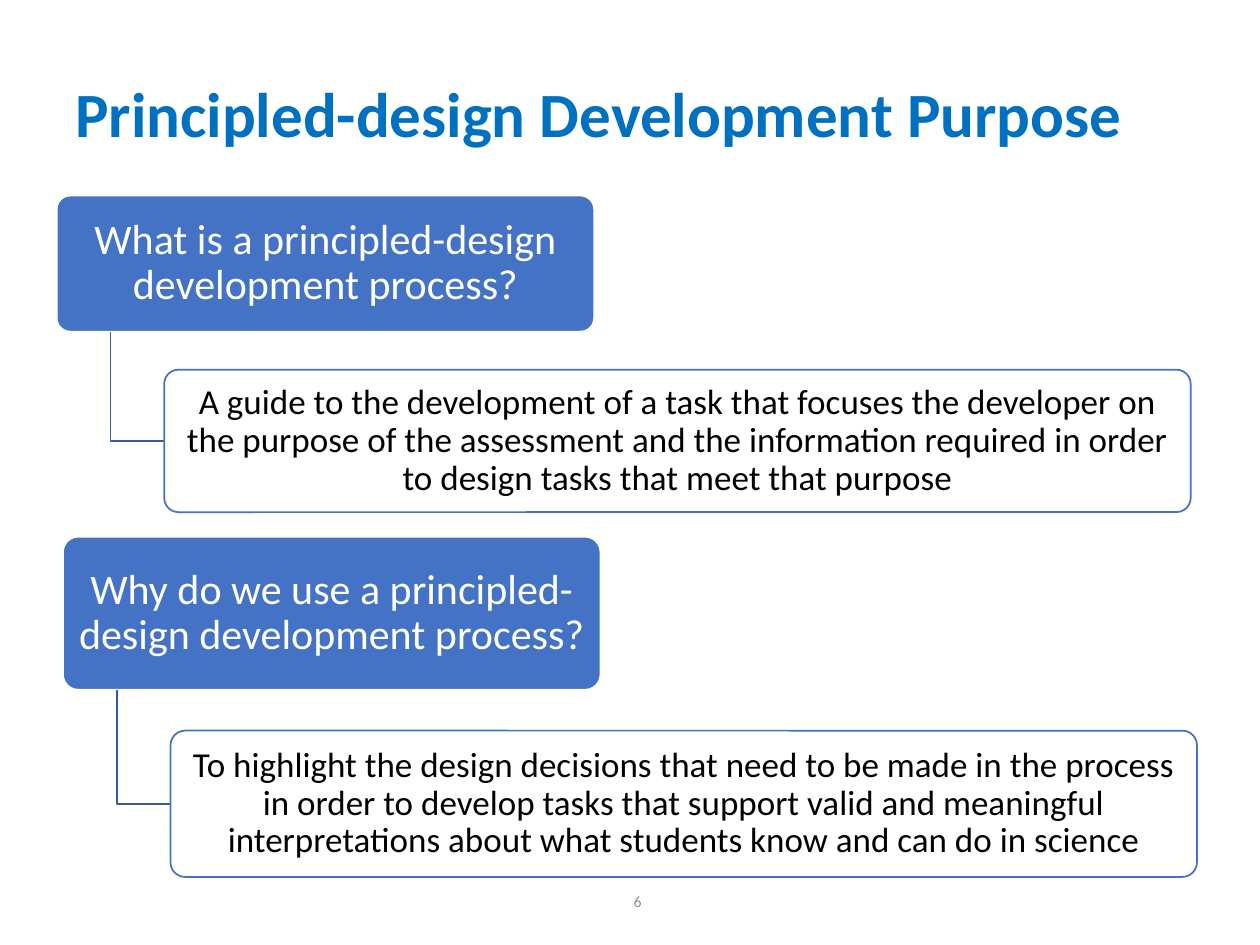
import pptx
import pptx.dml.color
import pptx.enum.shapes
import pptx.enum.text
import pptx.oxml.ns
import pptx.util
from collections import namedtuple
from lxml import etree

SLIDE_WIDTH = pptx.util.Inches(10)
SLIDE_HEIGHT = pptx.util.Inches(7.5)
COLORS = {
    "title": "0070C0",
    "question": "4472C4",
    "elbow": "365B9D",
    "number": "8C8C8C",
    "white": "FFFFFF",
    "black": "000000",
}
ALIGN = pptx.enum.text.PP_ALIGN
Box = namedtuple("Box", "left top width height")


def slide_box(left, top, width, height):
    """Turn shares of the slide's size into a box of lengths."""
    return Box(int(left * SLIDE_WIDTH), int(top * SLIDE_HEIGHT),
               int(width * SLIDE_WIDTH), int(height * SLIDE_HEIGHT))


def color(name):
    return pptx.dml.color.RGBColor.from_string(COLORS[name])


def write_text(shape, text, size, color_name, bold=False, align=ALIGN.LEFT,
               line_spacing=0.9, insets=(0.1, 0.05)):
    frame = shape.text_frame
    frame.word_wrap = True
    frame.vertical_anchor = pptx.enum.text.MSO_ANCHOR.MIDDLE
    frame.margin_left = frame.margin_right = pptx.util.Inches(insets[0])
    frame.margin_top = frame.margin_bottom = pptx.util.Inches(insets[1])
    paragraph = frame.paragraphs[0]
    paragraph.text = text
    paragraph.alignment = align
    paragraph.line_spacing = line_spacing
    paragraph.font.name = "Calibri"
    paragraph.font.size = pptx.util.Pt(size)
    paragraph.font.bold = bold
    paragraph.font.color.rgb = color(color_name)


def add_label(slide, box, text, **text_format):
    write_text(slide.shapes.add_textbox(*box), text, **text_format)


def set_line(shape, color_name):
    shape.shadow.inherit = False
    shape.line.color.rgb = color(color_name)
    shape.line.width = pptx.util.Pt(1)


def add_card(shapes, box, text, fill, line, opacity=100, **text_format):
    card = shapes.add_shape(
        pptx.enum.shapes.MSO_SHAPE.ROUNDED_RECTANGLE, *box)
    card.adjustments[0] = 0.1
    card.fill.solid()
    card.fill.fore_color.rgb = color(fill)
    if opacity < 100:
        rgb = card.fill._xPr.find(".//" + pptx.oxml.ns.qn("a:srgbClr"))
        alpha = etree.SubElement(rgb, pptx.oxml.ns.qn("a:alpha"))
        alpha.set("val", str(opacity * 1000))
    set_line(card, line)
    write_text(card, text, align=ALIGN.CENTER, insets=(0.08, 0.06),
               **text_format)


def add_elbow(shapes, left, top, right, bottom):
    builder = shapes.build_freeform(left, top)
    builder.add_line_segments([(left, bottom), (right, bottom)], close=False)
    elbow = builder.convert_to_shape()
    elbow.fill.background()
    set_line(elbow, "elbow")


def add_question_and_answer(slide, box, question, answer, question_share,
                            answer_share):
    """Place a question at the top left and its answer at the bottom right."""
    shapes = slide.shapes.add_group_shape().shapes
    question_box = Box(box.left, box.top, int(box.width * 0.474),
                       int(box.height * question_share))
    indent = question_box.width // 5
    answer_height = int(box.height * answer_share)
    answer_box = Box(box.left + indent, box.top + box.height - answer_height,
                     box.width - indent, answer_height)
    add_card(shapes, question_box, question, "question", "white",
             size=24, color_name="white")
    add_elbow(shapes, box.left + indent // 2, box.top + question_box.height,
              answer_box.left, answer_box.top + answer_height // 2)
    add_card(shapes, answer_box, answer, "white", "question", opacity=90,
             size=20, color_name="black")


def main():
    presentation = pptx.Presentation()
    presentation.slide_width = SLIDE_WIDTH
    presentation.slide_height = SLIDE_HEIGHT
    slide = presentation.slides.add_slide(presentation.slide_layouts[6])

    add_label(slide, slide_box(0.294, 0.927, 0.225, 0.053), "6",
              size=9, color_name="number", align=ALIGN.RIGHT, line_spacing=1.0)
    add_label(slide, slide_box(0.05, 0.04, 0.9, 0.167),
              "Principled-design Development Purpose",
              size=36, color_name="title", bold=True)
    add_question_and_answer(
        slide, slide_box(0.045, 0.207, 0.9, 0.335),
        "What is a principled-design development process?",
        "A guide to the development of a task that focuses the developer on "
        "the purpose of the assessment and the information required in order "
        "to design tasks that meet that purpose",
        question_share=0.43, answer_share=0.45)
    add_question_and_answer(
        slide, slide_box(0.05, 0.568, 0.9, 0.36),
        "Why do we use a principled-design development process?",
        "To highlight the design decisions that need to be made in the "
        "process in order to develop tasks that support valid and meaningful "
        "interpretations about what students know and can do in science",
        question_share=0.45, answer_share=0.43)
    presentation.save("out.pptx")


if __name__ == "__main__":
    main()
